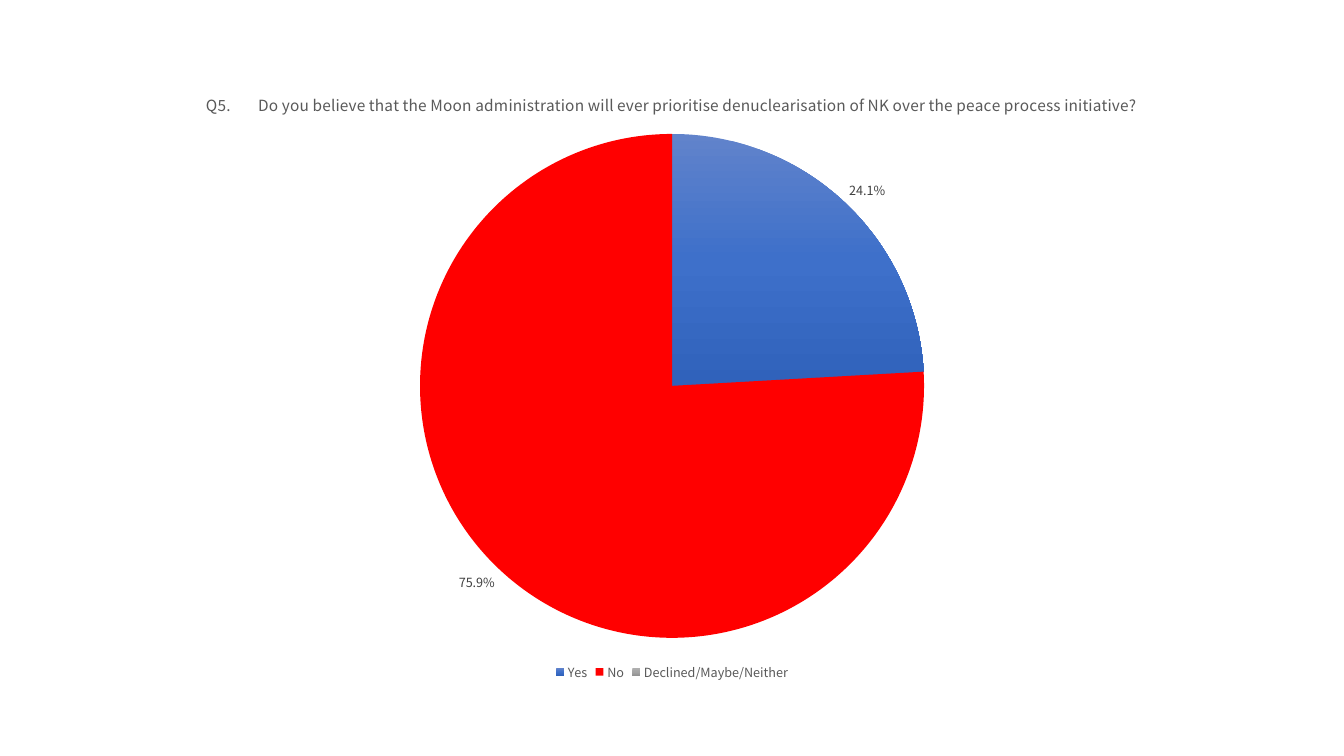
import pptx
import pptx.chart.data
import pptx.dml.color
import pptx.enum.chart
import pptx.oxml
import pptx.oxml.ns
import pptx.util

PX = 9071
FONT = "Noto Sans CJK KR"
COLORS = {"text": "595959", "label": "404040", "base": "000000", "no": "FF0000"}
GRADIENTS = {0: ["6183CB", "3E70CA", "3062BB"], 2: ["AFAFAF", "A5A5A5", "939393"]}
QUESTION = ("Do you believe that the Moon administration will ever prioritise "
            "denuclearisation of NK over the peace process initiative?")
CHART = {"x": 71, "y": 71, "w": 1202, "h": 614}
PIE = {"x": 420, "y": 134, "w": 504, "h": 504}


def style_font(font, size, color):
    font.name = FONT
    font.size = pptx.util.Pt(size)
    font.bold = False
    font.color.rgb = pptx.dml.color.RGBColor.from_string(COLORS[color])


presentation = pptx.Presentation()
presentation.slide_width = pptx.util.Inches(13.33)
presentation.slide_height = pptx.util.Inches(7.5)
slide = presentation.slides.add_slide(presentation.slide_layouts[6])

survey = pptx.chart.data.CategoryChartData(number_format="0.0%")
survey.categories = ["Yes", "No", "Declined/Maybe/Neither"]
survey.add_series("Q5. " + QUESTION, [0.241, 0.759, 0])
chart = slide.shapes.add_chart(
    pptx.enum.chart.XL_CHART_TYPE.PIE,
    *[CHART[side] * PX for side in "xywh"], survey).chart
style_font(chart.font, 10, "base")

chart.has_title = True
paragraph = chart.chart_title.text_frame.paragraphs[0]
for text, spacing in [("Q5.", 0), (" ", 1700), (QUESTION, 0)]:
    run = paragraph.add_run()
    run.text = text
    style_font(run.font, 11, "text")
    run.font._element.set("spc", str(spacing))
chart.chart_title.include_in_layout = False

chart.has_legend = True
chart.legend.position = pptx.enum.chart.XL_LEGEND_POSITION.BOTTOM
chart.legend.include_in_layout = False
style_font(chart.legend.font, 9, "text")

plot = chart.plots[0]
plot.vary_by_categories = True
answers = plot.series[0]
no_fill = answers.points[1].format.fill
no_fill.solid()
no_fill.fore_color.rgb = pptx.dml.color.RGBColor.from_string(COLORS["no"])

for index, colors in GRADIENTS.items():
    fill = answers.points[index].format.fill
    fill.gradient()
    fill.gradient_angle = 270
    stops = fill.gradient_stops._gsLst
    for stop in list(stops):
        stops.remove(stop)
    for position, color in zip([0, 50000, 100000], colors):
        stops.append(pptx.oxml.parse_xml(
            f'<a:gs {pptx.oxml.ns.nsdecls("a")} pos="{position}">'
            f'<a:srgbClr val="{color}"/></a:gs>'))

labels = answers.data_labels
labels.show_value = True
labels.show_percentage = False
labels.show_legend_key = False
labels.number_format = "0.0%"
labels.number_format_is_linked = False
labels.position = pptx.enum.chart.XL_LABEL_POSITION.OUTSIDE_END
style_font(labels.font, 9, "label")
hidden_label = pptx.oxml.parse_xml(
    f'<c:dLbl {pptx.oxml.ns.nsdecls("c")}><c:idx val="2"/><c:delete val="1"/></c:dLbl>')
labels._element.insert(0, hidden_label)

fractions = {
    "x": (PIE["x"] - CHART["x"]) / CHART["w"],
    "y": (PIE["y"] - CHART["y"]) / CHART["h"],
    "w": PIE["w"] / CHART["w"],
    "h": PIE["h"] / CHART["h"],
}
modes = '<c:layoutTarget val="inner"/><c:xMode val="edge"/><c:yMode val="edge"/>'
sizes = "".join(f'<c:{side} val="{value:.4f}"/>' for side, value in fractions.items())
layout = pptx.oxml.parse_xml(
    f'<c:layout {pptx.oxml.ns.nsdecls("c")}><c:manualLayout>{modes}{sizes}'
    '</c:manualLayout></c:layout>')
plot_area = chart._chartSpace.chart.plotArea
for old_layout in plot_area.findall(pptx.oxml.ns.qn("c:layout")):
    plot_area.remove(old_layout)
plot_area.insert(0, layout)

presentation.save("out.pptx")
